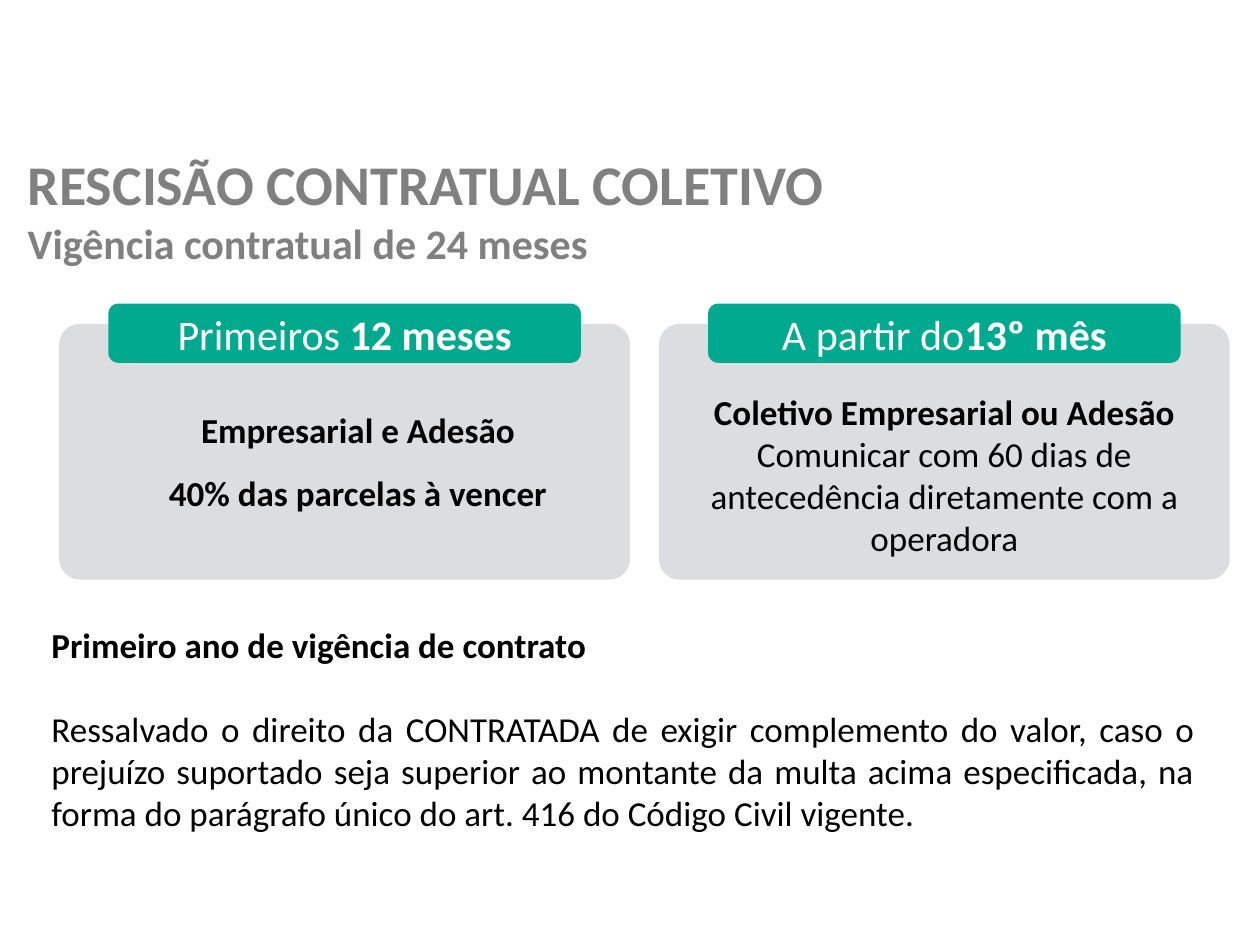
from dataclasses import dataclass

from pptx import Presentation
from pptx.dml.color import RGBColor
from pptx.enum.shapes import MSO_SHAPE
from pptx.enum.text import MSO_ANCHOR, MSO_AUTO_SIZE, PP_ALIGN
from pptx.util import Inches, Pt

GRAY, LIGHT, GREEN, WHITE, BLACK = "808080", "DCDDDE", "01A98F", "FFFFFF", "000000"


@dataclass
class Run:
    text: str
    size: int = 20
    bold: bool = False
    color: str = BLACK


@dataclass
class Para:
    runs: list[Run]
    align: PP_ALIGN = PP_ALIGN.CENTER
    spacing: float = 1.0
    before: int = 0


@dataclass
class Card:
    left: float
    heading: list[Run]
    body: list[Para]
    body_box: tuple[float, float, float, float]
    inset: float = 0.1


def rgb(color: str) -> RGBColor:
    return RGBColor.from_string(color)


def write(tf, paras: list[Para], anchor=MSO_ANCHOR.TOP, inset: float = 0.1) -> None:
    frame_format = {"word_wrap": True, "auto_size": MSO_AUTO_SIZE.NONE,
                    "vertical_anchor": anchor, "margin_left": Inches(inset)}
    for name, value in frame_format.items():
        setattr(tf, name, value)
    for i, para in enumerate(paras):
        p = tf.add_paragraph() if i else tf.paragraphs[0]
        para_format = {"alignment": para.align, "line_spacing": para.spacing,
                       "space_before": Pt(para.before)}
        for name, value in para_format.items():
            setattr(p, name, value)
        for run in para.runs:
            r = p.add_run()
            r.text = run.text
            font_format = {"name": "Calibri", "size": Pt(run.size), "bold": run.bold}
            for name, value in font_format.items():
                setattr(r.font, name, value)
            r.font.color.rgb = rgb(run.color)


def add_text(s, box: tuple[float, float, float, float], paras: list[Para],
             inset: float = 0.1) -> None:
    sp = s.shapes.add_textbox(*map(Inches, box))
    write(sp.text_frame, paras, inset=inset)


def add_round(s, box: tuple[float, float, float, float], fill: str, radius: float):
    sp = s.shapes.add_shape(MSO_SHAPE.ROUNDED_RECTANGLE, *map(Inches, box))
    sp.adjustments[0] = radius
    sp.shadow.inherit = False
    sp.fill.solid()
    sp.fill.fore_color.rgb = rgb(fill)
    sp.line.fill.background()
    return sp


def add_card(s, card: Card) -> None:
    add_round(s, (card.left, 2.57, 4.53, 2.03), LIGHT, 0.08)
    add_text(s, card.body_box, card.body, card.inset)
    sp = add_round(s, (card.left + 0.39, 2.41, 3.75, 0.47), GREEN, 0.17)
    write(sp.text_frame, [Para(card.heading)], MSO_ANCHOR.MIDDLE)


def add_title(s) -> None:
    sp = s.shapes.title
    box = {"left": 0.12, "top": 1.14, "width": 9.88, "height": 1.04}
    for name, value in box.items():
        setattr(sp, name, Inches(value))
    write(sp.text_frame, [
        Para([Run("RESCISÃO CONTRATUAL COLETIVO", 32, True, GRAY)], PP_ALIGN.LEFT),
        Para([Run("Vigência contratual de 24 meses", 24, True, GRAY)], PP_ALIGN.LEFT),
    ])


CARDS = [
    Card(0.47,
         [Run("Primeiros ", 24, False, WHITE), Run("12 meses", 24, True, WHITE)],
         [Para([Run("Empresarial e Adesão", bold=True)], spacing=1.5),
          Para([Run("40% das parcelas à vencer", bold=True)], spacing=1.5)],
         (0.47, 3.03, 4.45, 1.11), 0.39),
    Card(5.23,
         [Run("A partir do", 24, False, WHITE), Run("13º mês", 24, True, WHITE)],
         [Para([Run("Coletivo Empresarial ou Adesão", bold=True)], spacing=1.5),
          Para([Run("Comunicar com 60 dias de antecedência diretamente com a "
                    "operadora")])],
         (5.27, 2.88, 4.45, 1.62)),
]

CLAUSE = [
    Para([Run("Primeiro ano de vigência de contrato", bold=True)], PP_ALIGN.JUSTIFY),
    Para([Run("Ressalvado o direito da CONTRATADA de exigir complemento do valor, "
              "caso o prejuízo suportado seja superior ao montante da multa acima "
              "especificada, na forma do parágrafo único do art. 416 do Código Civil "
              "vigente.")], PP_ALIGN.JUSTIFY, before=24),
]


def main() -> None:
    prs = Presentation()
    prs.slide_width, prs.slide_height = Inches(10), Inches(7.5)
    s = prs.slides.add_slide(prs.slide_layouts[5])
    add_title(s)
    for card in CARDS:
        add_card(s, card)
    add_text(s, (0.31, 4.9, 9.27, 1.78), CLAUSE)
    prs.save("out.pptx")


if __name__ == "__main__":
    main()
